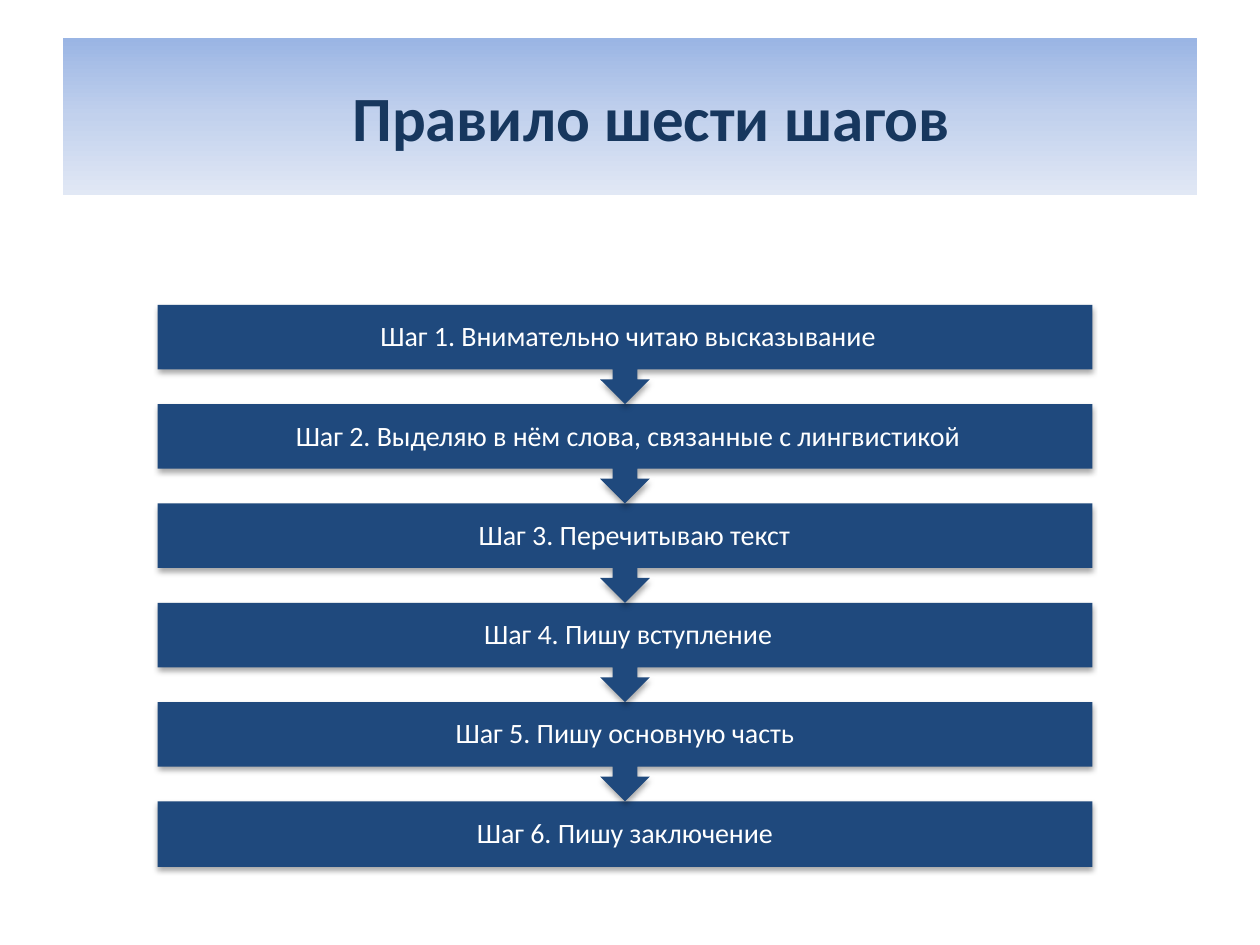
import copy

from lxml import etree
from pptx import Presentation
from pptx import util as u
from pptx.dml.color import RGBColor
from pptx.enum import shapes, text
from pptx.oxml import ns

COLORS = {
    "band_top": "9AB5E4",
    "band_middle": "C2D1ED",
    "band_bottom": "E1E8F5",
    "title": "17375E",
    "step": "1F497D",
    "step_text": "FFFFFF",
    "shadow": "000000",
}

# Each step with the extra left indent, in inches, that nudges its centred text
STEPS = [
    ("Шаг 1. Внимательно читаю высказывание", 0.05),
    ("Шаг 2. Выделяю в нём слова, связанные с лингвистикой", 0.05),
    ("Шаг 3. Перечитываю текст", 0.15),
    ("Шаг 4. Пишу вступление", 0.05),
    ("Шаг 5. Пишу основную часть", 0),
    ("Шаг 6. Пишу заключение", 0),
]
LEFT, WIDTH = 1.25, 7.42
FIRST_TOP, LAST_TOP = 2.42, 6.36
BOX_HEIGHT = 0.52
PITCH = (LAST_TOP - FIRST_TOP) / (len(STEPS) - 1)


def rgb(name):
    return RGBColor.from_string(COLORS[name])


class StepsSlide:
    font = "Calibri"

    def __init__(self, prs):
        self.slide = prs.slides.add_slide(prs.slide_layouts[5])
        self.flow = None

    def format_text(self, p, size, color, bold=False):
        p.alignment = text.PP_ALIGN.CENTER
        p.font.name, p.font.size, p.font.bold = self.font, u.Pt(size), bold
        p.font.color.rgb = rgb(color)

    def title(self, wording):
        sp = self.slide.shapes.title
        sp.left, sp.top = u.Inches(0.5), u.Inches(0.3)
        sp.width, sp.height = u.Inches(9), u.Inches(1.25)
        self.band_fill(sp)
        tf = sp.text_frame
        tf.text = wording
        tf.vertical_anchor = text.MSO_ANCHOR.MIDDLE
        tf.margin_left = u.Inches(0.44)
        self.format_text(tf.paragraphs[0], 36, "title", bold=True)

    def band_fill(self, sp):
        """Fill with a three-stop gradient running downwards."""
        sp.fill.gradient()
        sp.fill.gradient_angle = 270
        stops = sp._element.spPr.find(".//" + ns.qn("a:gsLst"))
        stops.insert(1, copy.deepcopy(stops[0]))
        names = ("band_top", "band_middle", "band_bottom")
        for i, (stop, name) in enumerate(zip(sp.fill.gradient_stops, names)):
            stop.position = i / 2
            stop.color.rgb = rgb(name)

    def shadow(self, sp):
        sp.shadow.inherit = False
        effects = sp._element.spPr.find(ns.qn("a:effectLst"))
        outer = etree.SubElement(
            effects, ns.qn("a:outerShdw"), blurRad=str(u.Pt(3.1)),
            dist=str(u.Pt(1.8)), dir="5400000", rotWithShape="0")
        color = etree.SubElement(outer, ns.qn("a:srgbClr"), val=COLORS["shadow"])
        etree.SubElement(color, ns.qn("a:alpha"), val="35000")

    def box(self, top, is_last):
        """Draw a step's bar, with an arrow to the next one unless it is last."""
        kind = shapes.MSO_SHAPE.RECTANGLE if is_last else shapes.MSO_SHAPE.UP_ARROW_CALLOUT
        height = BOX_HEIGHT if is_last else PITCH
        sp = self.flow.shapes.add_shape(
            kind, u.Inches(LEFT), u.Inches(top), u.Inches(WIDTH), u.Inches(height))
        if not is_last:
            sp.rotation = 180
        sp.fill.solid()
        sp.fill.fore_color.rgb = rgb("step")
        sp.line.fill.background()
        self.shadow(sp)

    def label(self, top, wording, indent):
        tb = self.flow.shapes.add_textbox(
            u.Inches(LEFT), u.Inches(top), u.Inches(WIDTH), u.Inches(BOX_HEIGHT))
        tf = tb.text_frame
        tf.word_wrap = True
        tf.vertical_anchor = text.MSO_ANCHOR.MIDDLE
        tf.margin_left = u.Inches(0.12 + indent)
        tf.margin_right = tf.margin_top = tf.margin_bottom = u.Inches(0.12)
        p = tf.paragraphs[0]
        p.text = wording
        p.line_spacing = 0.9
        self.format_text(p, 16, "step_text")

    def steps(self, items):
        """Stack the steps from the bottom up, so each arrow lies over the next bar."""
        self.flow = self.slide.shapes.add_group_shape()
        last = len(items) - 1
        for i in range(last, -1, -1):
            top = FIRST_TOP + i * PITCH
            self.box(top, i == last)
            self.label(top, *items[i])


def main():
    prs = Presentation()
    prs.slide_width, prs.slide_height = u.Inches(10), u.Inches(7.5)
    s = StepsSlide(prs)
    s.title("Правило шести шагов")
    s.steps(STEPS)
    prs.save("out.pptx")


if __name__ == "__main__":
    main()
